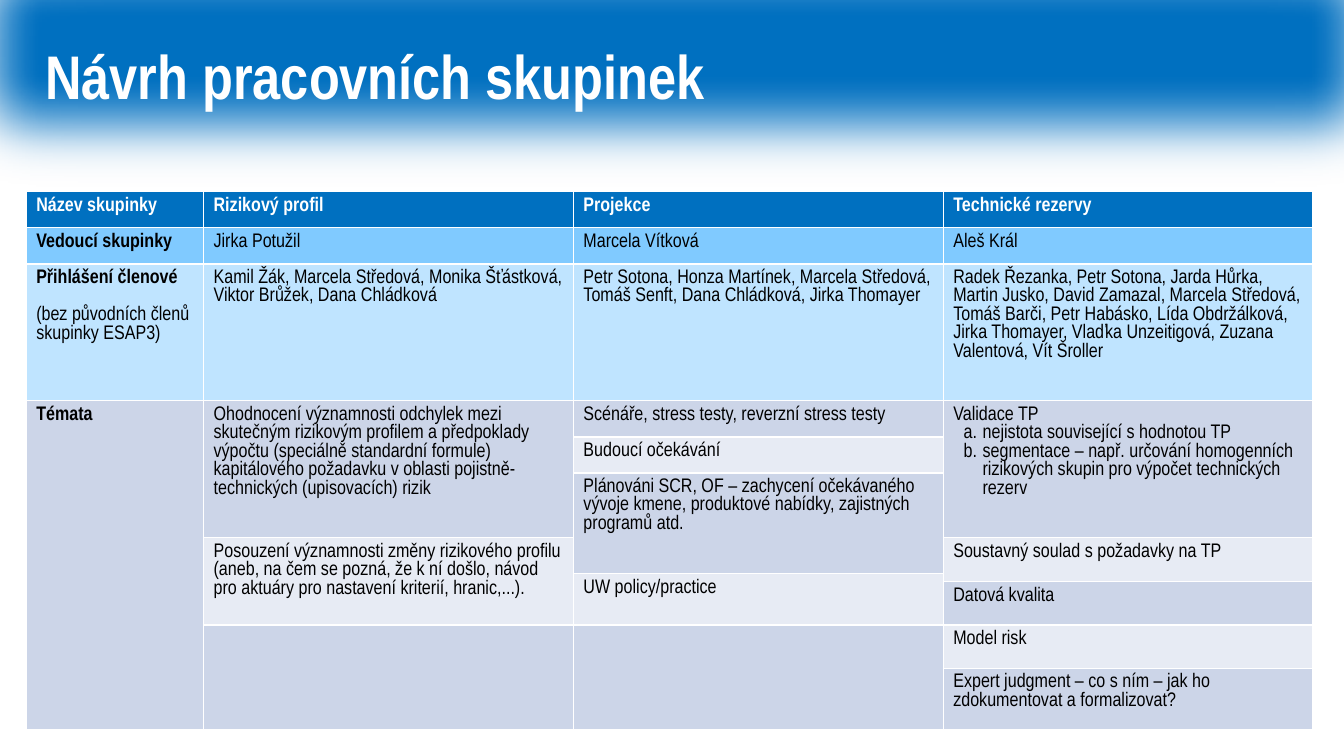
from pptx import Presentation
from pptx import util as u
from pptx.dml.color import RGBColor
from pptx.enum import shapes, text
from pptx.oxml import ns
from lxml import etree

WHITE = RGBColor(0xFF, 0xFF, 0xFF)
BLACK = RGBColor(0x00, 0x00, 0x00)
BLUE = RGBColor(0x00, 0x70, 0xC0)
SKY = RGBColor(0x80, 0xCA, 0xFF)
PALE = RGBColor(0xBF, 0xE4, 0xFF)
GREY = RGBColor(0xCC, 0xD5, 0xE8)
LIGHT = RGBColor(0xE7, 0xEB, 0xF4)

COLS = [4.47, 9.32, 9.32, 9.32]
ROWS = [0.91, 0.91, 3.45, 0.91, 0.91, 1.63, 0.91, 0.2, 1.09, 1.09, 1.55]

# Top rows: fill, then one text per column
TOP = [
    (BLUE, ["Název skupinky", "Rizikový profil", "Projekce", "Technické rezervy"]),
    (SKY, ["Vedoucí skupinky", "Jirka Potužil", "Marcela Vítková", "Aleš Král"]),
    (PALE, [
        "Přihlášení členové",
        "Kamil Žák, Marcela Středová, Monika Šťástková, Viktor Brůžek, Dana Chládková",
        "Petr Sotona, Honza Martínek, Marcela Středová, Tomáš Senft, "
        "Dana Chládková, Jirka Thomayer",
        "Radek Řezanka, Petr Sotona, Jarda Hůrka, Martin Jusko, David Zamazal, "
        "Marcela Středová, Tomáš Barči, Petr Habásko, Lída Obdržálková, "
        "Jirka Thomayer, Vlaďka Unzeitigová, Zuzana Valentová, Vít Šroller"]),
]

# Topics: for each column, the rows spanned and the text, from row 3 down
TOPICS = [
    [(8, "Témata")],
    [(3, "Ohodnocení významnosti odchylek mezi skutečným rizikovým profilem a "
         "předpoklady výpočtu (speciálně standardní formule) kapitálového požadavku "
         "v oblasti pojistně-technických (upisovacích) rizik"),
     (3, "Posouzení významnosti změny rizikového profilu (aneb, na čem se pozná, "
         "že k ní došlo, návod pro aktuáry pro nastavení kriterií, hranic,...)."),
     (2, "")],
    [(1, "Scénáře, stress testy, reverzní stress testy"),
     (1, "Budoucí očekávání"),
     (2, "Plánováni SCR, OF – zachycení očekávaného vývoje kmene, produktové "
         "nabídky, zajistných programů atd."),
     (2, "UW policy/practice"),
     (2, "")],
    [(3, "Validace TP"),
     (2, "Soustavný soulad s požadavky na TP"),
     (1, "Datová kvalita"),
     (1, "Model risk"),
     (1, "Expert judgment – co s ním – jak ho zdokumentovat a formalizovat?")],
]
POINTS = ["nejistota související s hodnotou TP",
          "segmentace – např. určování homogenních rizikových skupin "
          "pro výpočet technických rezerv"]


def apply(item, form):
    for key, value in form.items():
        setattr(item, key, value)


class Page:
    base = {"name": "Arial Narrow", "size": u.Pt(14), "bold": False}

    def __init__(self, deck):
        self.slide = deck.slides.add_slide(deck.slide_layouts[5])

    def label(self, para, words, color=BLACK, **form):
        run = para.add_run()
        run.text = words
        apply(run.font, {**self.base, **form})
        run.font.color.rgb = color

    def banner(self, box, color, soft):
        shape = self.slide.shapes.add_shape(
            shapes.MSO_SHAPE.RECTANGLE, *map(u.Cm, box))
        shape.fill.solid()
        shape.fill.fore_color.rgb = color
        shape.line.fill.background()
        shape.shadow.inherit = False
        glow = shape._element.spPr.find(ns.qn("a:effectLst"))
        etree.SubElement(glow, ns.qn("a:softEdge"), rad=str(u.Cm(soft)))

    def title(self, box, words):
        shape = self.slide.shapes.title
        apply(shape, dict(zip(("left", "top", "width", "height"), map(u.Cm, box))))
        frame = shape.text_frame
        apply(frame, {"vertical_anchor": text.MSO_ANCHOR.MIDDLE, "word_wrap": True})
        para = frame.paragraphs[0]
        apply(para, {"alignment": text.PP_ALIGN.LEFT, "line_spacing": 0.9})
        self.label(para, words, WHITE, size=u.Pt(44), bold=True)
        # Bring the title in front of the banner
        shape._element.getparent().append(shape._element)

    def table(self, left, top, cols, rows):
        grid = self.slide.shapes.add_table(
            len(rows), len(cols), u.Cm(left), u.Cm(top),
            u.Cm(sum(cols)), u.Cm(sum(rows))).table
        grid.horz_banding = False
        for col, size in zip(grid.columns, cols):
            col.width = u.Cm(size)
        for row, size in zip(grid.rows, rows):
            row.height = u.Cm(size)
        return grid

    def cell(self, grid, row, col, words, fill, span=1):
        for step in range(span):
            part = grid.cell(row + step, col)
            part.fill.solid()
            part.fill.fore_color.rgb = fill
        cell = grid.cell(row, col)
        if span > 1:
            cell.merge(grid.cell(row + span - 1, col))
        if words:
            self.label(cell.text_frame.paragraphs[0], words,
                       WHITE if row == 0 else BLACK, bold=row == 0 or col == 0)

    def point(self, cell, words):
        para = cell.text_frame.add_paragraph()
        props = para._p.get_or_add_pPr()
        props.set("marL", str(u.Cm(0.74)))
        props.set("indent", str(u.Cm(-0.48)))
        etree.SubElement(props, ns.qn("a:buAutoNum"), type="alphaLcPeriod")
        self.label(para, words)


def main():
    deck = Presentation()
    apply(deck, {"slide_width": u.Cm(33.87), "slide_height": u.Cm(19.05)})
    page = Page(deck)

    # Header
    page.banner((-2.34, -2.92, 38.71, 8.18), BLUE, 1.76)
    page.title((0.89, 0.43, 28.02, 3.15), "Návrh pracovních skupinek")

    # Groups, leaders and members
    grid = page.table(0.66, 4.83, COLS, ROWS)
    for row, (fill, line) in enumerate(TOP):
        for col, words in enumerate(line):
            page.cell(grid, row, col, words, fill)
    note = grid.cell(2, 0).text_frame.add_paragraph()
    note.space_before = u.Pt(13.5)
    page.label(note, "(bez původních členů skupinky ESAP3)")

    # Topics, in alternating fills
    for col, items in enumerate(TOPICS):
        row = len(TOP)
        for turn, (span, words) in enumerate(items):
            page.cell(grid, row, col, words, (GREY, LIGHT)[turn % 2], span)
            row += span
    for words in POINTS:
        page.point(grid.cell(len(TOP), 3), words)

    deck.save("out.pptx")


if __name__ == "__main__":
    main()
